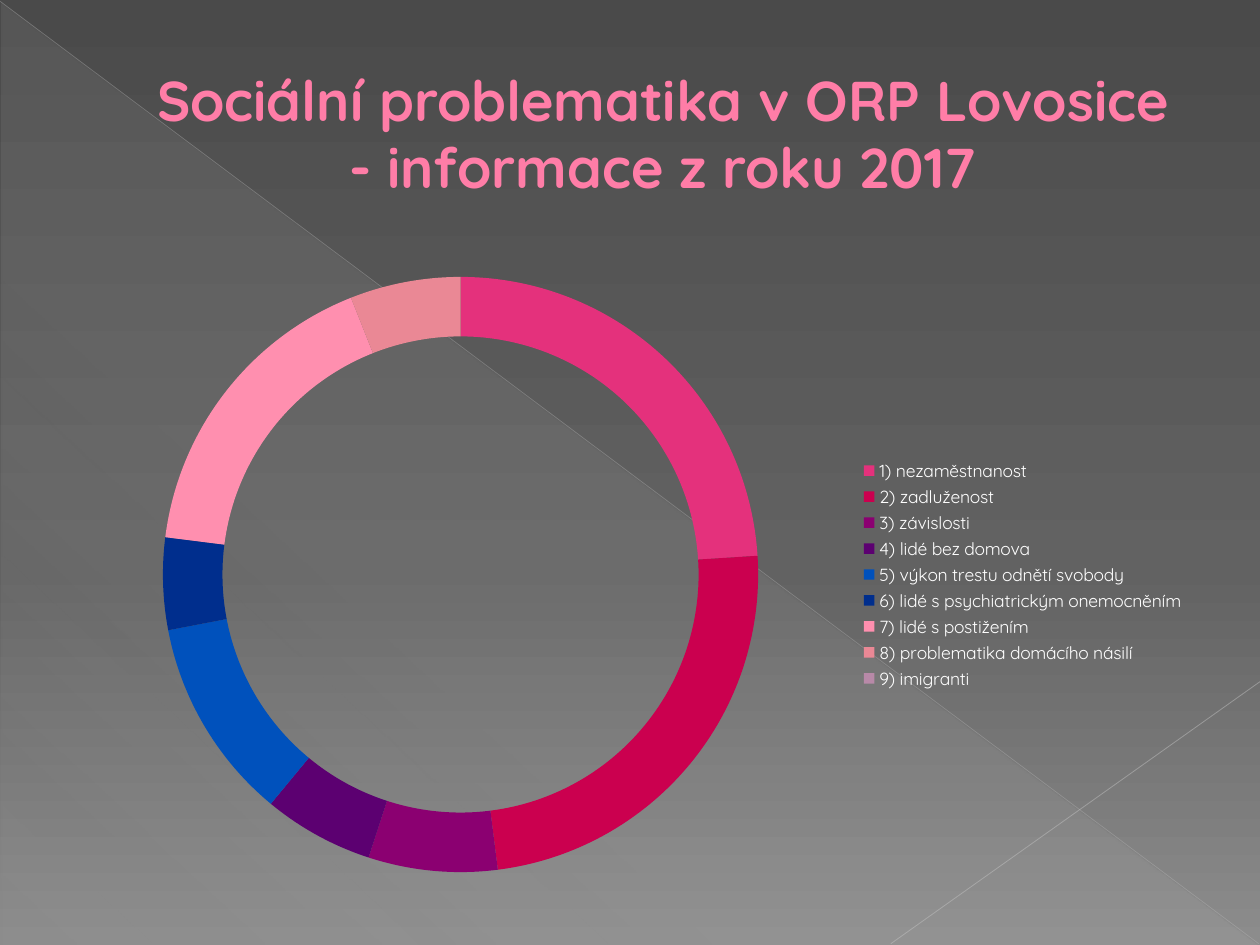
import pptx
import pptx.chart.data
import pptx.dml.color
import pptx.enum.chart
import pptx.enum.shapes
import pptx.enum.text
import pptx.oxml
import pptx.oxml.ns
import pptx.util
from lxml import etree
from pptx.util import Inches

COLOURS = {
    "background_top": "4A4A4A", "background_middle": "626262", "background_bottom": "8C8C8C",
    "triangle": "D2D2D2", "long_line": "BFBFBF", "short_line": "C6C6C6",
    "title": "FF7DA7", "title_outline": "B12761", "legend": "FFFFFF",
}
PROBLEMS = [
    ("1) nezaměstnanost", 24, "E4317C"),
    ("2) zadluženost", 24, "CB004F"),
    ("3) závislosti", 7, "8B0071"),
    ("4) lidé bez domova", 6, "5C0071"),
    ("5) výkon trestu odnětí svobody", 11, "0051BC"),
    ("6) lidé s psychiatrickým onemocněním", 5, "002E8D"),
    ("7) lidé s postižením", 17, "FF8FAF"),
    ("8) problematika domácího násilí", 6, "EA8895"),
    ("9) imigranti", 0, "B889A8"),
]
qn = pptx.oxml.ns.qn


def rgb(colour):
    return pptx.dml.color.RGBColor.from_string(colour)


def add_colour(parent, colour, opacity=100):
    element = etree.SubElement(parent, qn("a:srgbClr"), val=colour)
    if opacity < 100:
        etree.SubElement(element, qn("a:alpha"), val=str(opacity * 1000))


class SlideBuilder:
    font = "Quicksand"

    def __init__(self, presentation):
        self.slide = presentation.slides.add_slide(presentation.slide_layouts[5])
        self.shapes = self.slide.shapes

    def gradient(self, fill, owner, stops, angle):
        fill.gradient()
        fill.gradient_angle = 360 - angle
        stop_list = owner.find(".//" + qn("a:gsLst"))
        for stop in list(stop_list):
            stop_list.remove(stop)
        for position, colour, opacity in stops:
            stop = etree.SubElement(stop_list, qn("a:gs"), pos=str(position * 1000))
            add_colour(stop, colour, opacity)

    def background(self, stops):
        self.gradient(self.slide.background.fill, self.slide.element, stops, 90)

    def triangle(self, left, top, width, height, stops, angle):
        shape = self.shapes.add_shape(
            pptx.enum.shapes.MSO_SHAPE.RIGHT_TRIANGLE,
            Inches(left), Inches(top), Inches(width), Inches(height))
        shape.shadow.inherit = False
        shape.line.fill.background()
        self.gradient(shape.fill, shape.element, stops, angle)

    def line(self, start, end, colour, width, opacity):
        connector = self.shapes.add_connector(
            pptx.enum.shapes.MSO_CONNECTOR.STRAIGHT, *map(Inches, start + end))
        connector.line.width = pptx.util.Pt(width)
        connector.line.color.rgb = rgb(colour)
        colour_element = connector.element.spPr.find(".//" + qn("a:srgbClr"))
        etree.SubElement(colour_element, qn("a:alpha"), val=str(opacity * 1000))
        etree.SubElement(connector.element.spPr, qn("a:effectLst"))

    def title(self, text, left, top, width, height):
        title = self.shapes.title
        title.left, title.top = Inches(left), Inches(top)
        title.width, title.height = Inches(width), Inches(height)
        frame = title.text_frame
        frame.text = text
        frame.word_wrap = True
        frame.vertical_anchor = pptx.enum.text.MSO_ANCHOR.MIDDLE
        paragraph = frame.paragraphs[0]
        paragraph.alignment = pptx.enum.text.PP_ALIGN.CENTER
        paragraph.font.name = self.font
        paragraph.font.size = pptx.util.Pt(32)
        paragraph.font.bold = True
        paragraph.font.color.rgb = rgb(COLOURS["title"])
        properties = paragraph._p.get_or_add_pPr()
        properties.set("marL", str(Inches(0.53)))
        properties.set("indent", "0")
        outline = etree.Element(qn("a:ln"), w=str(pptx.util.Pt(0.5)))
        add_colour(etree.SubElement(outline, qn("a:solidFill")), COLOURS["title_outline"])
        paragraph.runs[0]._r.get_or_add_rPr().insert(0, outline)
        self.shapes.element.append(title.element)

    def doughnut(self, left, top, width, height, problems):
        names, values, colours = zip(*problems)
        data = pptx.chart.data.CategoryChartData()
        data.categories = names
        for number in range(1, 4):
            data.add_series(f"Series {number}", [None] * len(names))
        data.add_series("Series 4", values)
        chart = self.shapes.add_chart(
            pptx.enum.chart.XL_CHART_TYPE.DOUGHNUT,
            Inches(left), Inches(top), Inches(width), Inches(height), data).chart
        chart.has_title = False
        chart.font.name = self.font
        chart.font.size = pptx.util.Pt(10)
        chart.font.color.rgb = rgb(COLOURS["legend"])
        chart.has_legend = True
        chart.legend.position = pptx.enum.chart.XL_LEGEND_POSITION.RIGHT
        chart.legend.include_in_layout = False
        plot = chart.plots[0]
        plot.vary_by_categories = True
        for series in plot.series:
            for index, colour in enumerate(colours):
                point_format = series.points[index].format
                point_format.fill.solid()
                point_format.fill.fore_color.rgb = rgb(colour)
                point_format.line.fill.background()


def main():
    presentation = pptx.Presentation()
    presentation.slide_width, presentation.slide_height = Inches(10), Inches(7.5)
    builder = SlideBuilder(presentation)
    builder.background([
        (0, COLOURS["background_top"], 100),
        (60, COLOURS["background_middle"], 100),
        (100, COLOURS["background_bottom"], 100)])
    triangle_stops = [(position, COLOURS["triangle"], opacity)
                      for position, opacity in ((0, 10), (70, 8), (100, 1))]
    builder.triangle(0.01, 0.02, 9.98, 7.48, triangle_stops, 133)
    builder.line((0, 0.01), (9.99, 7.49), COLOURS["long_line"], 0.39, 35)
    builder.line((10, 5.41), (7.07, 7.49), COLOURS["short_line"], 0.47, 45)
    builder.title("Sociální problematika v ORP Lovosice - informace z roku 2017",
                  0.5, 0.29, 9, 1.53)
    builder.doughnut(0.5, 2.06, 9, 5, PROBLEMS)
    presentation.save("out.pptx")


if __name__ == "__main__":
    main()
